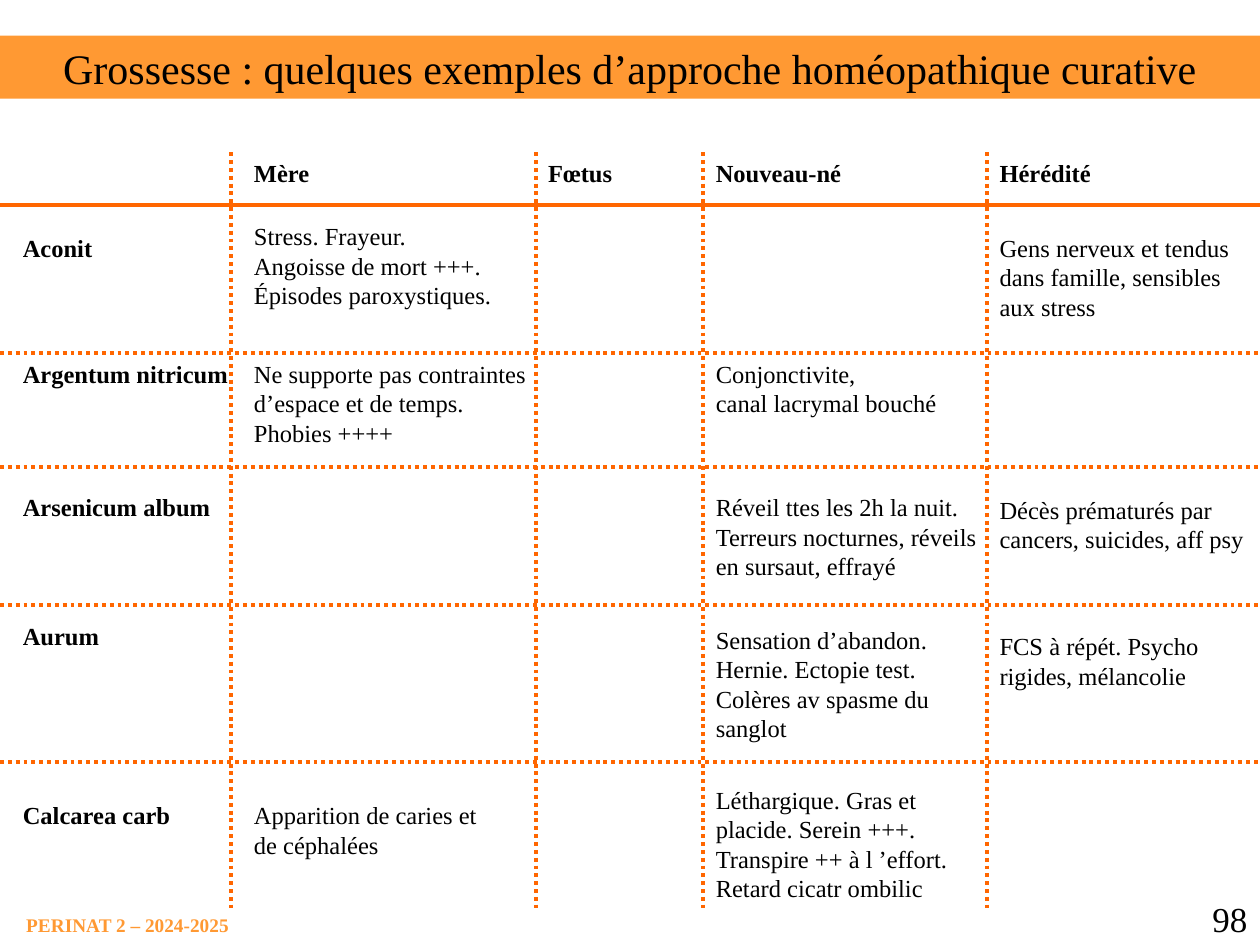
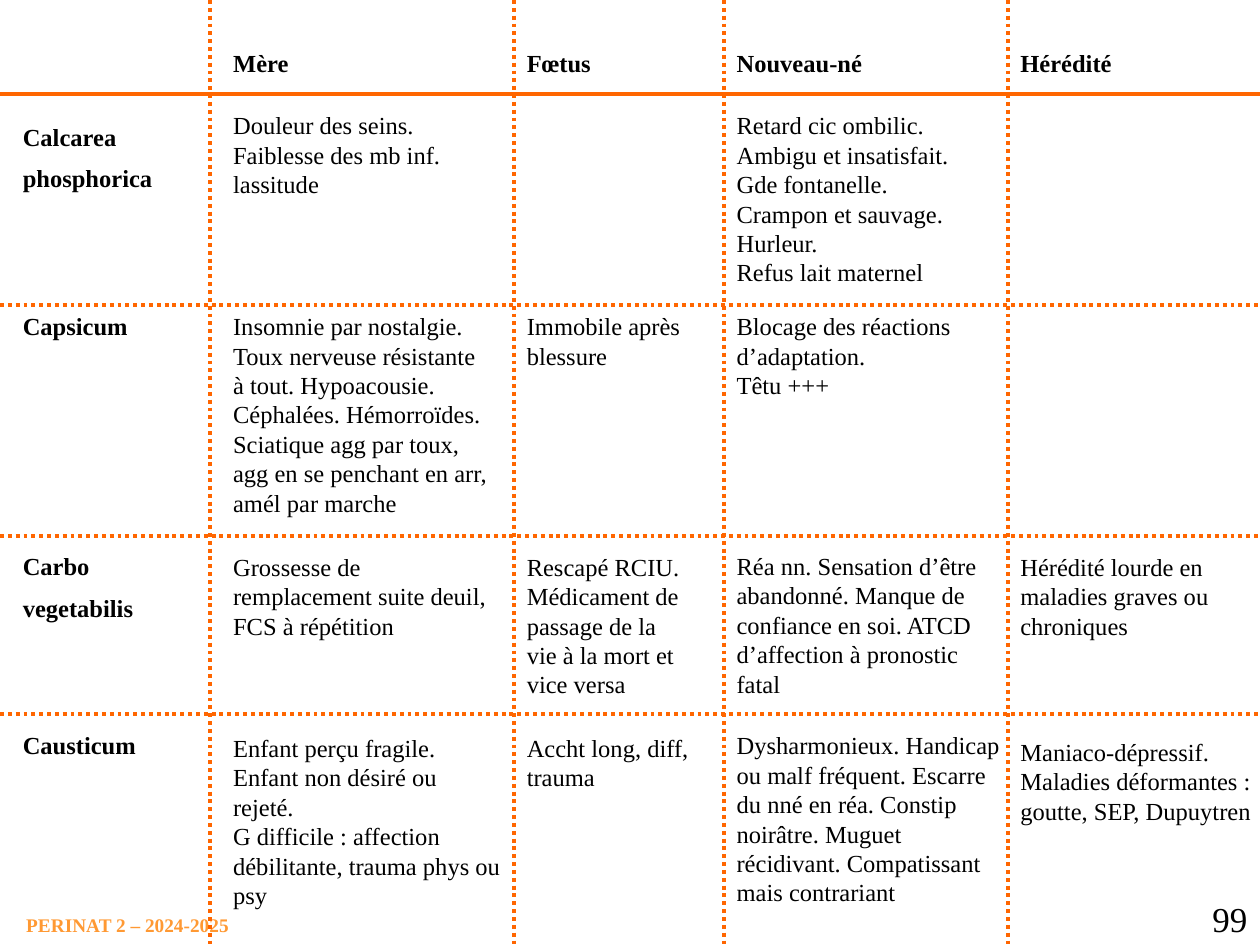
from dataclasses import dataclass

from lxml.etree import SubElement
from pptx import Presentation
from pptx.dml.color import RGBColor
from pptx.enum.dml import MSO_LINE
from pptx.enum.shapes import MSO_CONNECTOR
from pptx.enum.text import MSO_ANCHOR, MSO_AUTO_SIZE, PP_ALIGN
from pptx.oxml.ns import qn
from pptx.util import Cm, Pt

BLACK = RGBColor(0x00, 0x00, 0x00)
BAND_ORANGE = RGBColor(0xFF, 0x99, 0x33)
LINE_ORANGE = RGBColor(0xFF, 0x66, 0x00)
FONT = "Times New Roman"
FOOTER = "PERINAT 2 – 2024-2025"

PAGE_WIDTH, PAGE_HEIGHT = 25.4, 19.05
TITLE_ONLY, BLANK = 5, 6
LABEL_LEFT, LABEL_WIDTH = 0.21, 6.9
TEXT_HEIGHT = 0.84


@dataclass
class Box:
    left: float
    top: float
    width: float
    height: float


@dataclass
class Column:
    name: str
    line: float
    width: float
    gap: float = 0


@dataclass
class Cell:
    """Text of a cell, its distance below the row line and an optional width."""
    text: str
    drop: float = 0
    width: float = 0


@dataclass
class Row:
    """A remedy, the height of its line in the grid and its cells by column."""
    line: float
    label: Cell
    cells: dict


def write(frame, text, size=14, bold=False, color=BLACK,
          align=PP_ALIGN.LEFT, gap=0, anchor=MSO_ANCHOR.TOP):
    """Fill a text frame, one paragraph for each line of text."""
    frame.word_wrap = True
    frame.auto_size = MSO_AUTO_SIZE.NONE
    frame.vertical_anchor = anchor
    for index, line in enumerate(text.split("\n")):
        para = frame.paragraphs[0] if index == 0 else frame.add_paragraph()
        para.alignment = align
        para.space_before = Pt(gap if index else 0)
        span = para.add_run()
        span.text = line
        span.font.name = FONT
        span.font.size = Pt(size)
        span.font.bold = bold
        span.font.color.rgb = color


def add_text(page, box, text, **style):
    shape = page.shapes.add_textbox(
        Cm(box.left), Cm(box.top), Cm(box.width), Cm(box.height))
    write(shape.text_frame, text, **style)
    return shape


def add_line(page, left, top, right, bottom, dotted=True):
    line = page.shapes.add_connector(
        MSO_CONNECTOR.STRAIGHT, Cm(left), Cm(top), Cm(right), Cm(bottom))
    line.line.color.rgb = LINE_ORANGE
    line.line.width = Pt(2.25)
    if dotted:
        line.line.dash_style = MSO_LINE.ROUND_DOT
    SubElement(line._element.spPr, qn("a:effectLst"))


def add_title(page, box, text):
    title = page.shapes.title
    title.left, title.top = Cm(box.left), Cm(box.top)
    title.width, title.height = Cm(box.width), Cm(box.height)
    title.fill.solid()
    title.fill.fore_color.rgb = BAND_ORANGE
    write(title.text_frame, text, size=24, align=PP_ALIGN.CENTER,
          anchor=MSO_ANCHOR.MIDDLE)


def add_footer(page, box, number):
    label = add_text(page, Box(box.left + 0.53, box.top + 0.46, 5, 0.48),
                     FOOTER, size=11, bold=True, color=BAND_ORANGE)
    frame = label.text_frame
    frame.margin_left = frame.margin_right = 0
    frame.margin_top = frame.margin_bottom = 0
    add_text(page, Box(box.left + box.width - 2.1, box.top, 2.1, box.height),
             str(number), size=20, align=PP_ALIGN.RIGHT)


def add_grid(page, box, columns, rows, header_top=0):
    """Draw the remedy grid; the first row's line is the solid header rule."""
    right, bottom = box.left + box.width, box.top + box.height
    for column in columns:
        x = box.left + column.line
        add_line(page, x, box.top, x, bottom)
        add_text(page, Box(x + column.gap, box.top + header_top,
                           5.29, TEXT_HEIGHT), column.name, bold=True)
    for index, row in enumerate(rows):
        y = box.top + row.line
        add_line(page, box.left, y, right, y, dotted=index > 0)
        add_text(page, Box(box.left + LABEL_LEFT, y + row.label.drop,
                           LABEL_WIDTH, TEXT_HEIGHT),
                 row.label.text, bold=True, gap=7)
        for column in columns:
            cell = row.cells.get(column.name)
            if cell:
                add_text(page, Box(box.left + column.line + column.gap,
                                   y + cell.drop, cell.width or column.width,
                                   TEXT_HEIGHT), cell.text)


def make_columns(lines, mother_width):
    return [
        Column("Mère", lines[0], mother_width, gap=0.21),
        Column("Fœtus", lines[1], 3.81),
        Column("Nouveau-né", lines[2], 5.93),
        Column("Hérédité", lines[3], 5.5),
    ]


FIRST_ROWS = [
    Row(1.07, Cell("Aconit", 0.43), {
        "Mère": Cell("Stress. Frayeur.\n"
                     "Angoisse de mort +++. Épisodes paroxystiques.", 0.2),
        "Hérédité": Cell("Gens nerveux et tendus dans famille, "
                         "sensibles aux stress", 0.43),
    }),
    Row(4.04, Cell("Argentum nitricum"), {
        "Mère": Cell("Ne supporte pas contraintes d’espace et de temps.\n"
                     "Phobies ++++", width=6.77),
        "Nouveau-né": Cell("Conjonctivite,\ncanal lacrymal bouché"),
    }),
    Row(6.35, Cell("Arsenicum album", 0.38), {
        "Nouveau-né": Cell("Réveil ttes les 2h la nuit. Terreurs nocturnes, "
                           "réveils en sursaut, effrayé", 0.38),
        "Hérédité": Cell("Décès prématurés par cancers, suicides, aff psy",
                         0.43),
    }),
    Row(9.12, Cell("Aurum", 0.2), {
        "Nouveau-né": Cell("Sensation d’abandon. Hernie. Ectopie test. "
                           "Colères av spasme du sanglot", 0.28),
        "Hérédité": Cell("FCS à répét. Psycho rigides, mélancolie", 0.41),
    }),
    Row(12.3, Cell("Calcarea carb", 0.64), {
        "Mère": Cell("Apparition de caries et de céphalées", 0.64, 5.29),
        "Nouveau-né": Cell("Léthargique. Gras et placide. Serein +++. "
                           "Transpire ++ à l ’effort. "
                           "Retard cicatr ombilic", 0.33),
    }),
]

SECOND_ROWS = [
    Row(1.9, Cell("Calcarea\nphosphorica", 0.43), {
        "Mère": Cell("Douleur des seins. Faiblesse des mb inf. lassitude",
                     0.2, 5.5),
        "Nouveau-né": Cell("Retard cic ombilic. Ambigu et insatisfait. "
                           "Gde fontanelle. Crampon et sauvage. Hurleur.\n"
                           "Refus lait maternel", 0.2, 5.5),
    }),
    Row(6.15, Cell("Capsicum"), {
        "Mère": Cell("Insomnie par nostalgie. Toux nerveuse résistante "
                     "à tout. Hypoacousie. Céphalées. Hémorroïdes. "
                     "Sciatique agg par toux, agg en se penchant en arr, "
                     "amél par marche", width=5.72),
        "Fœtus": Cell("Immobile après blessure"),
        "Nouveau-né": Cell("Blocage des réactions d’adaptation.\nTêtu +++"),
    }),
    Row(10.8, Cell("Carbo\nvegetabilis", 0.18), {
        "Mère": Cell("Grossesse de remplacement suite deuil, "
                     "FCS à répétition", 0.2),
        "Fœtus": Cell("Rescapé RCIU. Médicament de passage de la vie "
                      "à la mort et vice versa", 0.2),
        "Nouveau-né": Cell("Réa nn. Sensation d’être abandonné. Manque de "
                           "confiance en soi. ATCD d’affection à pronostic "
                           "fatal", 0.18),
        "Hérédité": Cell("Hérédité lourde en maladies graves ou chroniques",
                         0.2),
    }),
    Row(14.4, Cell("Causticum", 0.2), {
        "Mère": Cell("Enfant perçu fragile. Enfant non désiré ou rejeté.\n"
                     "G difficile : affection débilitante, "
                     "trauma phys ou psy", 0.25),
        "Fœtus": Cell("Accht long, diff, trauma", 0.25),
        "Nouveau-né": Cell("Dysharmonieux. Handicap ou malf fréquent. "
                           "Escarre du nné en réa. Constip noirâtre. Muguet "
                           "récidivant. Compatissant mais contrariant", 0.2),
        "Hérédité": Cell("Maniaco-dépressif. Maladies déformantes : goutte, "
                         "SEP, Dupuytren", 0.33),
    }),
]


def add_page(deck, layout, number):
    page = deck.slides.add_slide(deck.slide_layouts[layout])
    add_footer(page, Box(0, 17.96, PAGE_WIDTH, 1.09), number)
    return page


def main():
    deck = Presentation()
    deck.slide_width, deck.slide_height = Cm(PAGE_WIDTH), Cm(PAGE_HEIGHT)

    page = add_page(deck, TITLE_ONLY, 98)
    add_title(page, Box(0, 0.72, PAGE_WIDTH, 1.27),
              "Grossesse : quelques exemples d’approche homéopathique curative")
    add_grid(page, Box(0, 3.07, PAGE_WIDTH, 15.24),
             make_columns([4.66, 10.8, 14.18, 19.9], 5.5), FIRST_ROWS)

    page = add_page(deck, BLANK, 99)
    add_grid(page, Box(0, 0, PAGE_WIDTH, PAGE_HEIGHT),
             make_columns([4.24, 10.37, 14.6, 20.32], 5.93), SECOND_ROWS,
             header_top=0.84)

    deck.save("out.pptx")


if __name__ == "__main__":
    main()
